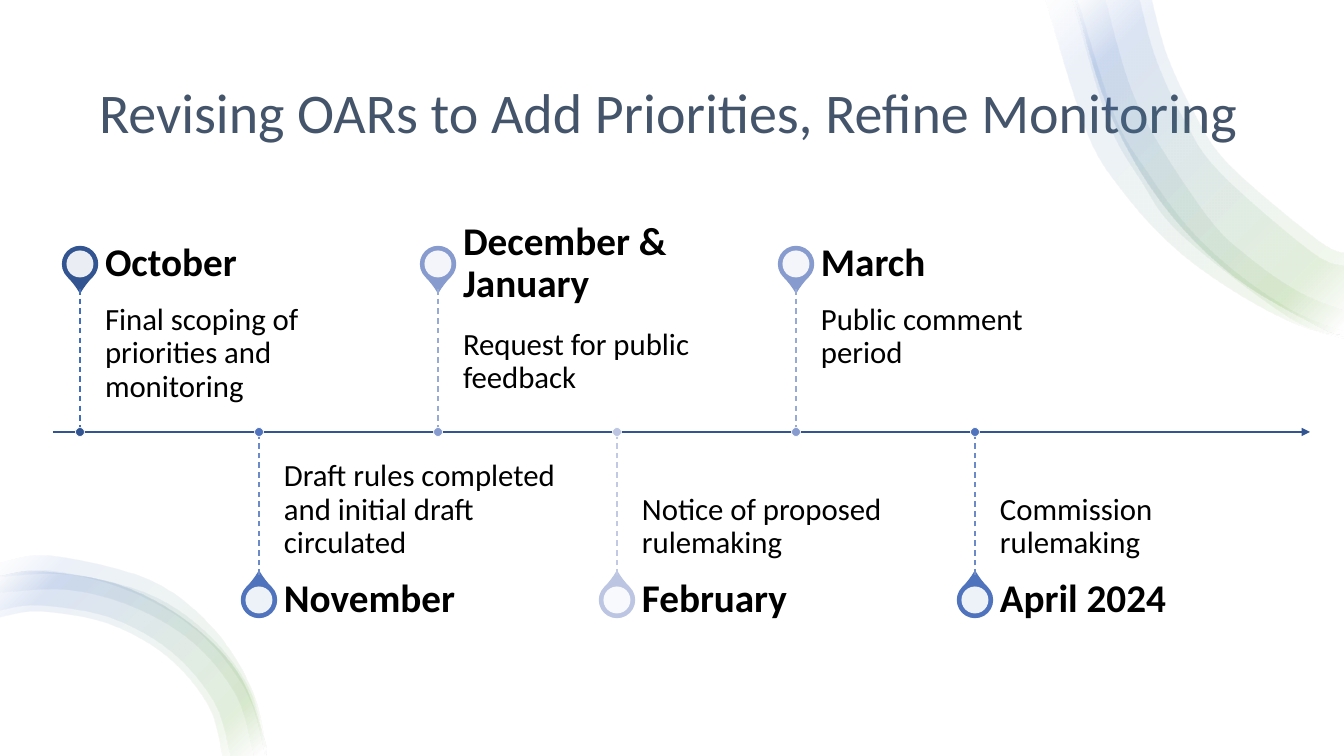
from lxml.etree import SubElement
from pptx import Presentation
from pptx.dml.color import RGBColor
from pptx.enum.dml import MSO_LINE
from pptx.enum.shapes import MSO_CONNECTOR, MSO_SHAPE
from pptx.enum.text import MSO_ANCHOR, MSO_AUTO_SIZE, PP_ALIGN
from pptx.oxml.ns import qn
from pptx.util import Pt

WHITE = RGBColor(0xFF, 0xFF, 0xFF)
BLACK = RGBColor(0, 0, 0)
SLATE = RGBColor(0x44, 0x54, 0x6A)
NAVY = RGBColor(0x32, 0x54, 0x91)
NAVY_STEM = RGBColor(0x41, 0x6D, 0xBB)
BLUE = RGBColor(0x4F, 0x73, 0xBD)
BLUE_STEM = RGBColor(0x6C, 0x8A, 0xC8)
SOFT = RGBColor(0x87, 0x9B, 0xCE)
SOFT_STEM = RGBColor(0x97, 0xA9, 0xD5)
PALE = RGBColor(0xBC, 0xC6, 0xE2)
PALE_STEM = RGBColor(0xC1, 0xC9, 0xE4)
SWOOSH_GREEN = RGBColor(0x70, 0xAD, 0x47)
SWOOSH_BLUE = RGBColor(0x44, 0x72, 0xC4)

TITLE = "Revising OARs to Add Priorities, Refine Monitoring"
MILESTONES = [
    ("October", "Final scoping of priorities and monitoring", NAVY, NAVY_STEM, 0),
    ("November", "Draft rules completed and initial draft circulated", BLUE, BLUE_STEM, 0),
    ("December & January", "Request for public feedback", SOFT, SOFT_STEM, 25),
    ("February", "Notice of proposed rulemaking", PALE, PALE_STEM, 0),
    ("March", "Public comment period", SOFT, SOFT_STEM, 0),
    ("April 2024", "Commission rulemaking", BLUE, BLUE_STEM, 0),
]

TOP_RIM = [(1076, 0), (1108, 108), (1161, 202), (1233, 276), (1319, 327), (1344, 335)]
LOW_RIM = [(0, 577), (40, 572), (118, 585), (186, 621), (238, 674), (264, 741), (265, 756)]
SWOOSHES = [
    ([(1046, 0), (1087, 132), (1125, 194), (1174, 247), (1231, 289), (1292, 322), (1344, 338)],
     [(1078, 0), (1115, 116), (1149, 174), (1190, 229), (1240, 275), (1296, 312), (1344, 331)]),
    (TOP_RIM, [(1152, 0), (1167, 55), (1194, 113), (1229, 165), (1317, 240), (1344, 253)]),
    ([(1073, 0), (1108, 120), (1141, 180), (1182, 235), (1289, 317), (1344, 336)],
     [(1106, 0), (1138, 105), (1205, 213), (1249, 257), (1300, 292), (1344, 310)]),
    (TOP_RIM, [(1140, 0), (1156, 59), (1184, 120), (1220, 173), (1311, 252), (1344, 266)]),
    (LOW_RIM, [(0, 618), (40, 612), (108, 624), (167, 657), (208, 706), (222, 756)]),
    (LOW_RIM, [(0, 611), (40, 606), (110, 618), (171, 652), (214, 703), (230, 756)]),
    ([(0, 576), (50, 571), (143, 592), (205, 632), (249, 690), (265, 756)],
     [(0, 593), (68, 590), (135, 608), (194, 644), (236, 697), (253, 756)]),
    ([(0, 563), (51, 556), (149, 580), (212, 628), (252, 692), (266, 756)],
     [(0, 577), (70, 575), (140, 596), (202, 636), (247, 695), (264, 756)]),
]
SWOOSH_STOPS = [(2, WHITE), (16, SWOOSH_GREEN), (85, SWOOSH_BLUE), (100, WHITE)]

SCALE = 914400 / 100.8
AXIS_Y, AXIS_LEFT, AXIS_RIGHT = 432, 53, 1310
FIRST_X, STEP = 80, 179
PIN_OFFSET, STEM = 168, 143
TEXT_GAP, TEXT_W, HEAD_H = 25, 298, 50


def px(n):
    return round(n * SCALE)


def smooth_curve(pts, steps=6):
    padded = [pts[0]] + pts + [pts[-1]]
    out = [pts[0]]
    for a, b, c, d in zip(padded, padded[1:], padded[2:], padded[3:]):
        for i in range(1, steps + 1):
            t = i / steps
            out.append(tuple(
                (2 * q + (r - p) * t + (2 * p - 5 * q + 4 * r - u) * t ** 2
                 + (3 * q - p - 3 * r + u) * t ** 3) / 2
                for p, q, r, u in zip(a, b, c, d)))
    return out


def add_alpha(color, percent):
    SubElement(color, qn("a:alpha"), val=str(percent * 1000))


def add_swoosh(s, outer, inner):
    pts = smooth_curve(outer) + smooth_curve(inner)[::-1]
    fb = s.shapes.build_freeform(px(pts[0][0]), px(pts[0][1]))
    fb.add_line_segments([(px(x), px(y)) for x, y in pts[1:]], close=True)
    sp = fb.convert_to_shape()
    sp.shadow.inherit = False
    sp.line.fill.background()
    sp.fill.gradient()
    grad = sp.fill._xPr.find(qn("a:gradFill"))
    stops = grad.find(qn("a:gsLst"))
    for gs in list(stops):
        stops.remove(gs)
    for pos, color in SWOOSH_STOPS:
        gs = SubElement(stops, qn("a:gs"), pos=str(pos * 1000))
        add_alpha(SubElement(gs, qn("a:srgbClr"), val=str(color)), 10)
    grad.find(qn("a:lin")).set("ang", str(225 * 60000))


def add_disc(s, kind, x, y, size, fill, line=None, width=1):
    sp = s.shapes.add_shape(kind, px(x - size / 2), px(y - size / 2), px(size), px(size))
    sp.shadow.inherit = False
    sp.fill.solid()
    sp.fill.fore_color.rgb = fill
    if line is None:
        sp.line.fill.background()
    else:
        sp.line.color.rgb = line
        sp.line.width = Pt(width)
    return sp


def add_line(s, x1, y1, x2, y2, color, width):
    c = s.shapes.add_connector(MSO_CONNECTOR.STRAIGHT, px(x1), px(y1), px(x2), px(y2))
    c.line.color.rgb = color
    c.line.width = Pt(width)
    SubElement(c._element.spPr, qn("a:effectLst"))
    return c


def format_text(tf, text, size, color, anchor, bold=False):
    tf.word_wrap = True
    tf.auto_size = MSO_AUTO_SIZE.NONE
    tf.vertical_anchor = anchor
    tf.text = text
    p = tf.paragraphs[0]
    p.alignment = PP_ALIGN.LEFT
    p.line_spacing = 0.9
    font = p.runs[0].font
    font.name, font.size, font.bold = "Calibri", Pt(size), bold
    font.color.rgb = color


def add_label(s, x, y, h, insets, *style):
    tf = s.shapes.add_textbox(px(x), px(y), px(TEXT_W), px(h)).text_frame
    tf.margin_left, tf.margin_top, tf.margin_right, tf.margin_bottom = map(px, insets)
    format_text(tf, *style)


def add_milestone(s, i, month, task, color, stem_color, drop):
    x = FIRST_X + i * STEP
    above = i % 2 == 0
    side = -1 if above else 1
    pin_y = AXIS_Y + side * PIN_OFFSET
    stem_y = AXIS_Y + side * STEM
    pin = add_disc(s, MSO_SHAPE.TEAR, x, pin_y, 35, color, color)
    pin.adjustments[0] = 1.15
    pin.rotation = 135 if above else 315
    hole = add_disc(s, MSO_SHAPE.OVAL, x, pin_y, 27, WHITE)
    add_alpha(hole._element.spPr.find(qn("a:solidFill"))[0], 90)
    insets = (0, 15, 15, 23) if above else (0, 23, 0, 15)
    add_label(s, x + TEXT_GAP, min(stem_y, AXIS_Y) + drop, STEM - 2 * drop, insets,
              task, 22, BLACK, MSO_ANCHOR.TOP if above else MSO_ANCHOR.BOTTOM)
    add_label(s, x + TEXT_GAP, pin_y - HEAD_H / 2, HEAD_H, (0, 0, 19, 0),
              month, 28, BLACK, MSO_ANCHOR.MIDDLE, True)
    stem = add_line(s, x, stem_y, x, AXIS_Y, stem_color, 1)
    stem.line.dash_style = MSO_LINE.DASH
    add_disc(s, MSO_SHAPE.OVAL, x, AXIS_Y, 9, color, WHITE, 0.5)


def main():
    prs = Presentation()
    prs.slide_width, prs.slide_height = px(1344), px(756)
    s = prs.slides.add_slide(prs.slide_layouts[5])
    s.background.fill.solid()
    s.background.fill.fore_color.rgb = WHITE
    title = s.shapes.title
    title.left, title.top, title.width, title.height = map(px, (89, 50, 1166, 131))
    format_text(title.text_frame, TITLE, 40, SLATE, MSO_ANCHOR.MIDDLE)
    for outer, inner in SWOOSHES:
        add_swoosh(s, outer, inner)
    axis = add_line(s, AXIS_LEFT, AXIS_Y, AXIS_RIGHT, AXIS_Y, NAVY, 1.5)
    SubElement(axis.line._get_or_add_ln(), qn("a:tailEnd"), type="triangle")
    for i, milestone in enumerate(MILESTONES):
        add_milestone(s, i, *milestone)
    prs.save("out.pptx")


if __name__ == "__main__":
    main()
